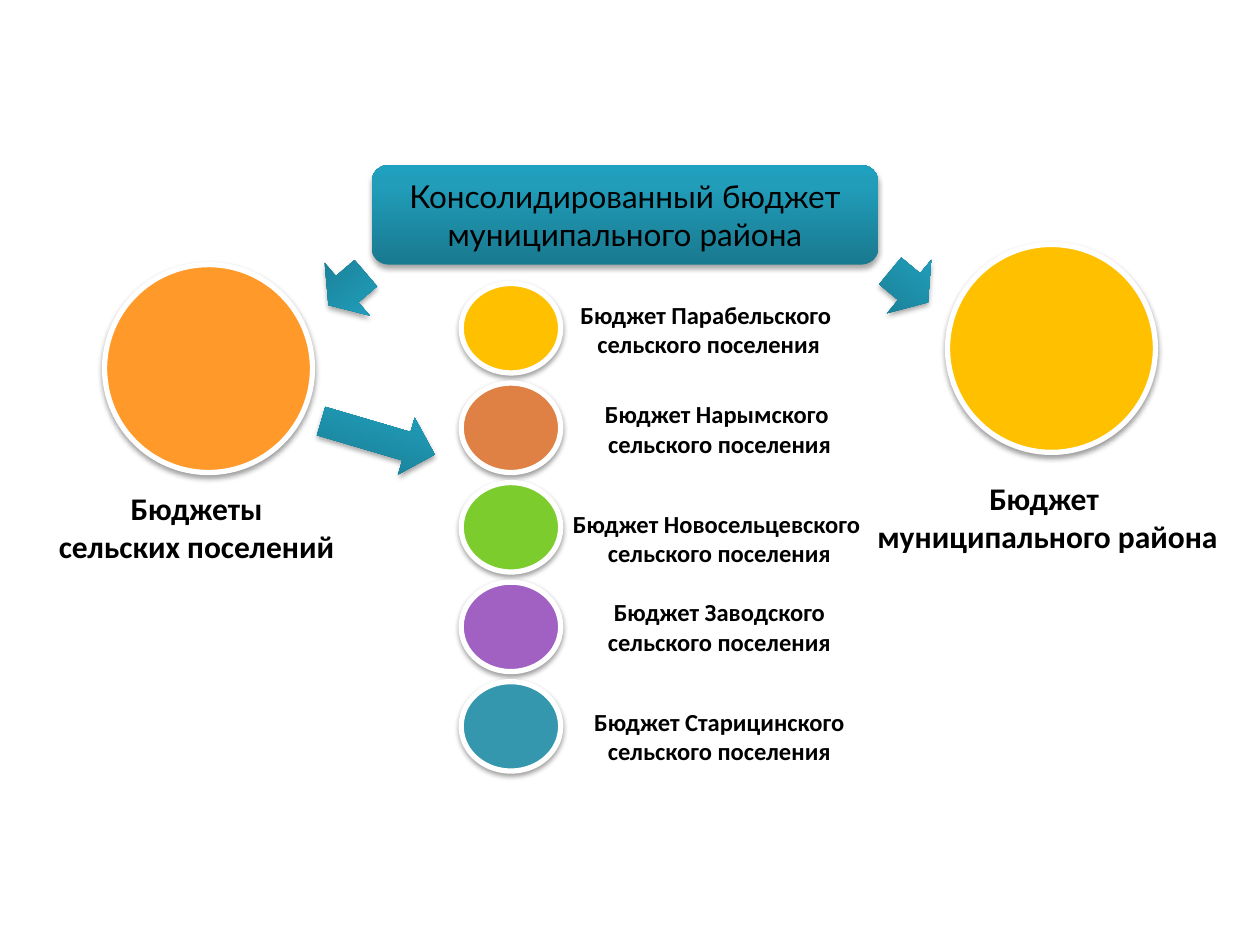
from dataclasses import dataclass

from lxml import etree
from pptx import Presentation
from pptx.dml.color import RGBColor
from pptx.enum.shapes import MSO_SHAPE
from pptx.enum.text import MSO_ANCHOR, MSO_AUTO_SIZE, PP_ALIGN
from pptx.oxml.ns import qn
from pptx.util import Inches, Pt

ROUNDED = MSO_SHAPE.ROUNDED_RECTANGLE
ELLIPSE = MSO_SHAPE.OVAL
ARROW = MSO_SHAPE.RIGHT_ARROW
CENTER = PP_ALIGN.CENTER
RIGHT = PP_ALIGN.RIGHT
MIDDLE = MSO_ANCHOR.MIDDLE
FIT_SHAPE = MSO_AUTO_SIZE.SHAPE_TO_FIT_TEXT


@dataclass(frozen=True)
class Theme:
    text: str = "000000"
    outline: str = "FFFFFF"
    orange: str = "FF9929"
    yellow: str = "FFC000"
    copper: str = "DF8045"
    green: str = "7DCC2E"
    purple: str = "A061C3"
    teal: str = "3497AE"
    gradient: tuple = ((0, "19798F"), (80, "219DBA"), (100, "1EA0BE"))
    title_font: str = "Lato"
    label_font: str = "Calibri"
    large: int = 18
    small: int = 14


class BudgetSlide:
    def __init__(self, page, theme):
        self.page = page
        self.theme = theme

    def add_text(self, para, text, font, size, bold, align=CENTER):
        para.alignment = align
        span = para.add_run()
        span.text = text
        span.font.name = font
        span.font.size = Pt(size)
        span.font.bold = bold
        span.font.color.rgb = RGBColor.from_string(self.theme.text)

    def add_shadow(self, shape, alpha, distance):
        shape.shadow.inherit = False
        effects = shape._element.spPr.find(qn("a:effectLst"))
        shadow = etree.SubElement(
            effects, qn("a:outerShdw"), blurRad=str(Pt(3.1)), dist=str(Pt(distance)),
            dir="5400000", rotWithShape="0")
        color = etree.SubElement(shadow, qn("a:srgbClr"), val="000000")
        etree.SubElement(color, qn("a:alpha"), val=str(alpha * 1000))

    def add_shape(self, kind, left, top, width, height):
        return self.page.shapes.add_shape(
            kind, Inches(left), Inches(top), Inches(width), Inches(height))

    def gradient_shape(self, kind, left, top, width, height, rotation=0):
        shape = self.add_shape(kind, left, top, width, height)
        shape.rotation = rotation
        shape.fill.gradient()
        shape.fill.gradient_angle = 90
        stops = shape._element.spPr.find(qn("a:gradFill")).find(qn("a:gsLst"))
        for stop in list(stops):
            stops.remove(stop)
        for position, color in self.theme.gradient:
            stop = etree.SubElement(stops, qn("a:gs"), pos=str(position * 1000))
            etree.SubElement(stop, qn("a:srgbClr"), val=color)
        shape.line.fill.background()
        self.add_shadow(shape, 35, 1.8)
        return shape

    def title(self, text, left, top, width, height):
        shape = self.gradient_shape(ROUNDED, left, top, width, height)
        frame = shape.text_frame
        frame.word_wrap = True
        frame.vertical_anchor = MIDDLE
        self.add_text(frame.paragraphs[0], text, self.theme.title_font,
                      self.theme.large, False)

    def circle(self, color, left, top, width, height):
        shape = self.add_shape(ELLIPSE, left, top, width, height)
        shape.fill.solid()
        shape.fill.fore_color.rgb = RGBColor.from_string(color)
        shape.line.color.rgb = RGBColor.from_string(self.theme.outline)
        shape.line.width = Pt(3)
        self.add_shadow(shape, 38, 1.6)

    def label(self, lines, left, top, width, height, size, first_align=CENTER):
        box = self.page.shapes.add_textbox(
            Inches(left), Inches(top), Inches(width), Inches(height))
        frame = box.text_frame
        frame.word_wrap = False
        frame.auto_size = FIT_SHAPE
        for index, line in enumerate(lines):
            para = frame.paragraphs[0] if index == 0 else frame.add_paragraph()
            align = first_align if index == 0 else CENTER
            self.add_text(para, line, self.theme.label_font, size, True, align)


def main():
    deck = Presentation()
    deck.slide_width = Inches(10)
    deck.slide_height = Inches(7.5)
    theme = Theme()
    slide = BudgetSlide(deck.slides.add_slide(deck.slide_layouts[6]), theme)

    slide.title("Консолидированный бюджет муниципального района", 2.95, 1.31, 4.02, 0.79)

    slide.circle(theme.orange, 0.83, 2.1, 1.65, 1.65)
    slide.circle(theme.yellow, 7.52, 1.94, 1.65, 1.65)
    slide.label(("Бюджет ", "муниципального района"), 6.85, 3.75, 2.93, 0.71, theme.large)
    slide.label(("Бюджеты", "сельских поселений"), 0.35, 3.83, 2.42, 0.71, theme.large)

    settlements = (
        (theme.yellow, "Бюджет Парабельского ", 4.5, 2.33, 2.25, CENTER),
        (theme.copper, "Бюджет Нарымского ", 4.64, 3.12, 2.08, RIGHT),
        (theme.green, "Бюджет Новосельцевского ", 4.44, 3.99, 2.54, CENTER),
        (theme.purple, "Бюджет Заводского", 4.72, 4.69, 1.98, CENTER),
        (theme.teal, "Бюджет Старицинского", 4.61, 5.56, 2.2, CENTER),
    )
    first_top, row_step = 2.25, 0.79
    for row, (color, name, left, top, width, align) in enumerate(settlements):
        slide.circle(color, 3.66, first_top + row * row_step, 0.79, 0.71)
        slide.label((name, "сельского поселения"), left, top, width, 0.57,
                    theme.small, align)

    for left, top, width, height, rotation in (
        (2.56, 2.02, 0.39, 0.55, 139.5),
        (7.02, 2, 0.39, 0.55, 39.7),
        (2.53, 3.24, 0.94, 0.47, 16.4),
    ):
        slide.gradient_shape(ARROW, left, top, width, height, rotation)

    deck.save("out.pptx")


if __name__ == "__main__":
    main()
